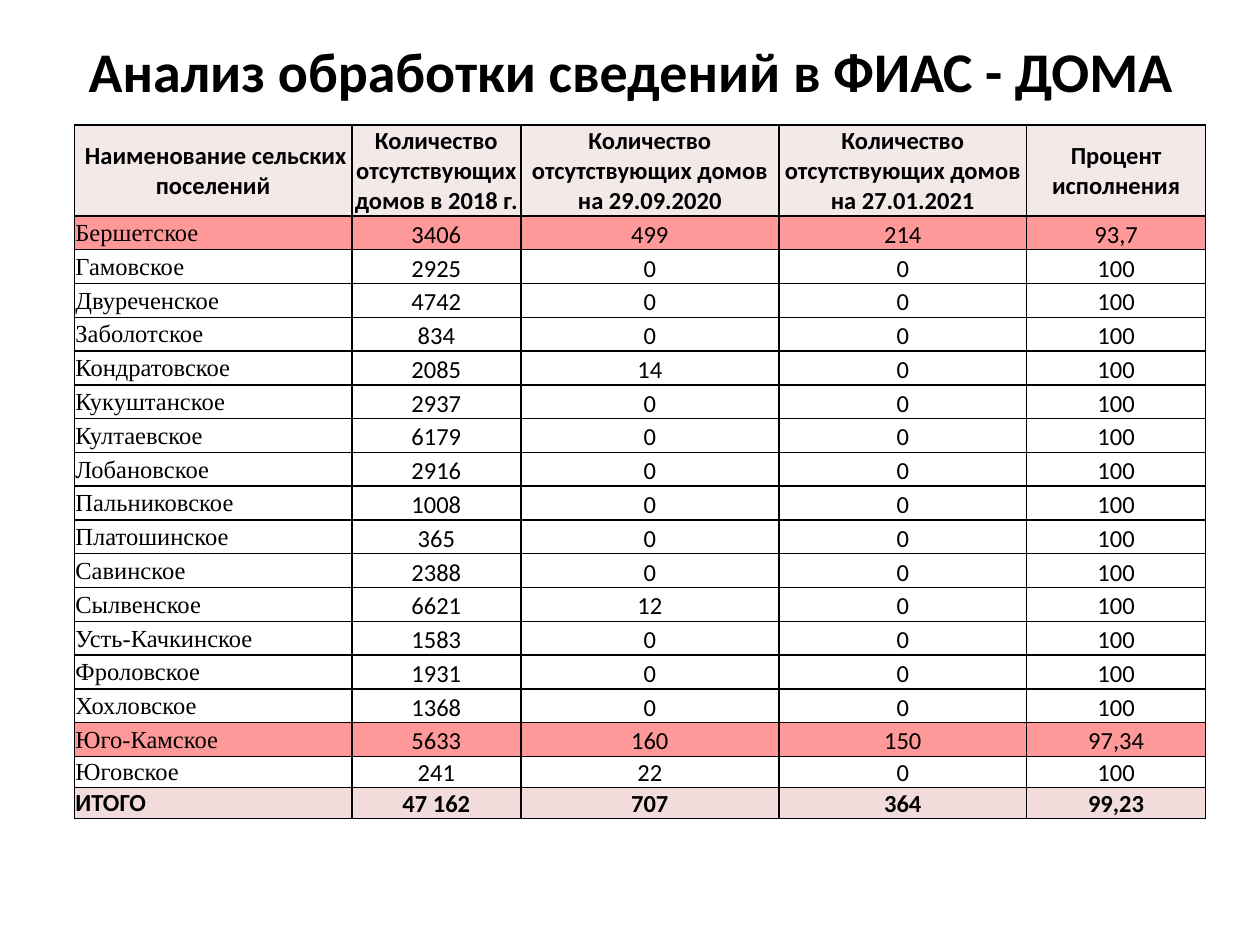
"""Build the slide on house records processed in the FIAS address register."""
from dataclasses import dataclass

from lxml.etree import SubElement
from pptx import Presentation
from pptx.dml.color import RGBColor
from pptx.enum.text import MSO_ANCHOR, MSO_AUTO_SIZE, PP_ALIGN
from pptx.oxml.ns import qn
from pptx.util import Pt


@dataclass(frozen=True)
class Theme:
    """Colours, fonts and type sizes."""
    ink: str = "000000"
    header: str = "F4E9E9"
    alert: str = "FF9999"
    plain: str = "FFFFFF"
    total: str = "F2DCDB"
    sans: str = "Calibri"
    serif: str = "Times New Roman"
    title_size: int = 32
    table_size: int = 14


@dataclass(frozen=True)
class Settlement:
    """House counts of one settlement; most have none left to process."""
    name: str
    y2018: str
    y2020: str = "0"
    y2021: str = "0"
    percent: str = "100"


@dataclass(frozen=True)
class CellStyle:
    """Look of one table cell."""
    fill: str
    font: str
    bold: bool = False
    align: PP_ALIGN = PP_ALIGN.CENTER
    anchor: MSO_ANCHOR = MSO_ANCHOR.BOTTOM


THEME = Theme()
TITLE = "Анализ обработки сведений в ФИАС - ДОМА"
HEADERS = (
    " Наименование сельских поселений",
    "Количество отсутствующих домов в 2018 г.",
    "Количество отсутствующих домов на 29.09.2020",
    "Количество отсутствующих домов на 27.01.2021",
    "Процент исполнения",
)
SETTLEMENTS = (
    Settlement("Бершетское", "3406", "499", "214", "93,7"),
    Settlement("Гамовское", "2925"),
    Settlement("Двуреченское", "4742"),
    Settlement("Заболотское", "834"),
    Settlement("Кондратовское", "2085", "14"),
    Settlement("Кукуштанское", "2937"),
    Settlement("Култаевское", "6179"),
    Settlement("Лобановское", "2916"),
    Settlement("Пальниковское", "1008"),
    Settlement("Платошинское", "365"),
    Settlement("Савинское", "2388"),
    Settlement("Сылвенское", "6621", "12"),
    Settlement("Усть-Качкинское", "1583"),
    Settlement("Фроловское", "1931"),
    Settlement("Хохловское", "1368"),
    Settlement("Юго-Камское", "5633", "160", "150", "97,34"),
    Settlement("Юговское", "241", "22"),
)
TOTAL = Settlement("ИТОГО", "47 162", "707", "364", "99,23")
COL_WIDTHS = (158.6, 96.5, 147.5, 141.6, 102.3)
ROW_HEIGHTS = (52, *[19.32] * (len(SETTLEMENTS) - 1), 17.8, 17.8)


def format_run(r, font: str, size: float, bold: bool) -> None:
    """Set the font of a run."""
    r.font.name = font
    r.font.size = Pt(size)
    r.font.bold = bold
    r.font.color.rgb = RGBColor.from_string(THEME.ink)


def add_borders(cell) -> None:
    """Draw a thin solid line on all four sides of a cell."""
    tcPr = cell._tc.get_or_add_tcPr()
    for i, tag in enumerate(("a:lnL", "a:lnR", "a:lnT", "a:lnB")):
        ln = SubElement(tcPr, qn(tag), w=str(Pt(1)))
        fill = SubElement(ln, qn("a:solidFill"))
        SubElement(fill, qn("a:srgbClr"), val=THEME.ink)
        tcPr.insert(i, ln)


def fill_cell(cell, text: str, style: CellStyle) -> None:
    """Write and format one table cell."""
    cell.margin_left = cell.margin_right = cell.margin_top = Pt(0.6)
    cell.margin_bottom = Pt(0)
    cell.vertical_anchor = style.anchor
    cell.fill.solid()
    cell.fill.fore_color.rgb = RGBColor.from_string(style.fill)
    p = cell.text_frame.paragraphs[0]
    p.text = text
    p.alignment = style.align
    format_run(p.runs[0], style.font, THEME.table_size, style.bold)
    add_borders(cell)


def fill_row(row, texts: tuple, first: CellStyle, rest: CellStyle) -> None:
    """Fill a row whose first cell has its own style."""
    for i, (cell, text) in enumerate(zip(row.cells, texts)):
        fill_cell(cell, text, rest if i else first)


def values(item: Settlement) -> tuple:
    """Return the texts of a row from left to right."""
    return item.name, item.y2018, item.y2020, item.y2021, item.percent


def add_title(s) -> None:
    """Place and format the title."""
    sp = s.shapes.title
    sp.left, sp.top, sp.width, sp.height = Pt(36.7), Pt(15), Pt(648), Pt(50)
    tf = sp.text_frame
    tf.text = TITLE
    tf.auto_size = MSO_AUTO_SIZE.NONE
    tf.vertical_anchor = MSO_ANCHOR.MIDDLE
    p = tf.paragraphs[0]
    p.alignment = PP_ALIGN.CENTER
    format_run(p.runs[0], THEME.sans, THEME.title_size, True)


def add_houses_table(s) -> None:
    """Add the table of settlements with its header and total."""
    table = s.shapes.add_table(
        len(ROW_HEIGHTS), len(COL_WIDTHS), Pt(42.5), Pt(71.4),
        Pt(sum(COL_WIDTHS)), Pt(sum(ROW_HEIGHTS))).table
    for col, width in zip(table.columns, COL_WIDTHS):
        col.width = Pt(width)
    for row, height in zip(table.rows, ROW_HEIGHTS):
        row.height = Pt(height)
    header, *body, total = table.rows

    head = CellStyle(THEME.header, THEME.sans, True, anchor=MSO_ANCHOR.MIDDLE)
    fill_row(header, HEADERS, head, head)
    for row, item in zip(body, SETTLEMENTS):
        color = THEME.plain if item.y2021 == "0" else THEME.alert
        name = CellStyle(color, THEME.serif, False, PP_ALIGN.LEFT, MSO_ANCHOR.MIDDLE)
        fill_row(row, values(item), name, CellStyle(color, THEME.sans))
    label = CellStyle(THEME.total, THEME.sans, True, PP_ALIGN.LEFT, MSO_ANCHOR.TOP)
    fill_row(total, values(TOTAL), label, CellStyle(THEME.total, THEME.sans, True))


def main() -> None:
    """Build and save the presentation."""
    prs = Presentation()
    prs.slide_width, prs.slide_height = Pt(720), Pt(540)
    s = prs.slides.add_slide(prs.slide_layouts[5])
    add_title(s)
    add_houses_table(s)
    prs.save("out.pptx")


if __name__ == "__main__":
    main()
